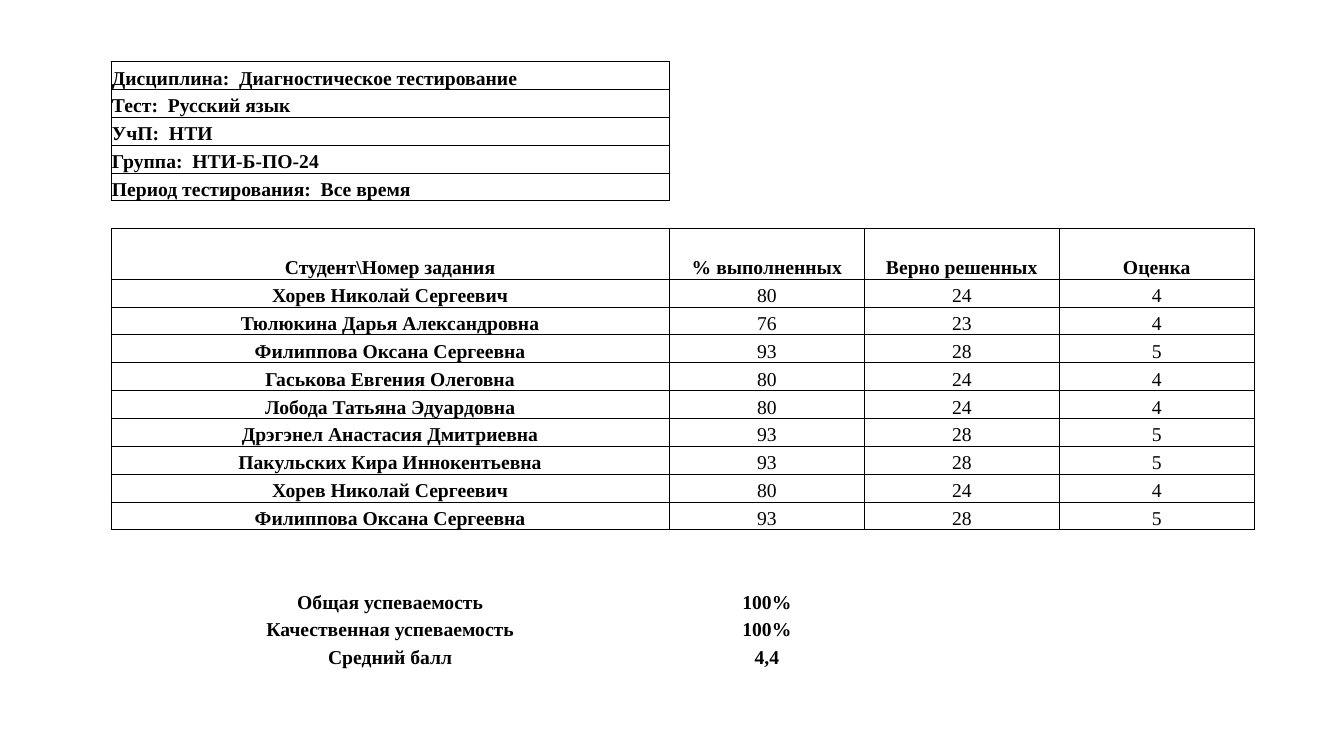
from dataclasses import dataclass

from lxml.etree import SubElement
from pptx import Presentation
from pptx.dml.color import RGBColor
from pptx.enum.text import MSO_ANCHOR, PP_ALIGN
from pptx.oxml.ns import qn
from pptx.util import Inches, Pt


@dataclass(frozen=True)
class Theme:
    font: str = "Times New Roman"
    text_size: int = 14
    ink: str = "000000"
    border_width: float = 0.5
    inset: float = 0.01


DETAILS = [
    "Дисциплина:  Диагностическое тестирование",
    "Тест:  Русский язык",
    "УчП:  НТИ",
    "Группа:  НТИ-Б-ПО-24",
    "Период тестирования:  Все время",
]
HEADINGS = ["Студент\\Номер задания", "% выполненных", "Верно решенных", "Оценка"]
RESULTS = [
    ("Хорев Николай Сергеевич", 80, 24, 4),
    ("Тюлюкина Дарья Александровна", 76, 23, 4),
    ("Филиппова Оксана Сергеевна", 93, 28, 5),
    ("Гаськова Евгения Олеговна", 80, 24, 4),
    ("Лобода Татьяна Эдуардовна", 80, 24, 4),
    ("Дрэгэнел Анастасия Дмитриевна", 93, 28, 5),
    ("Пакульских Кира Иннокентьевна", 93, 28, 5),
    ("Хорев Николай Сергеевич", 80, 24, 4),
    ("Филиппова Оксана Сергеевна", 93, 28, 5),
]
SUMMARY = [
    ("Общая успеваемость", "100%"),
    ("Качественная успеваемость", "100%"),
    ("Средний балл", "4,4"),
]

HEADING_ROW = len(DETAILS) + 1
RESULTS_END = HEADING_ROW + len(RESULTS)
ROWS = [[detail] for detail in DETAILS] + [[], HEADINGS, *RESULTS, [], [], *SUMMARY]
COLUMN_COUNT = len(HEADINGS)

LEFT, TOP, WIDTH, HEIGHT = 1.1, 0.61, 11.34, 6.03
NAME_WIDTH = 5.54
HEADING_HEIGHT = 0.5
SCORE_WIDTH = (WIDTH - NAME_WIDTH) / (COLUMN_COUNT - 1)
ROW_HEIGHT = (HEIGHT - HEADING_HEIGHT) / (len(ROWS) - 1)

NEIGHBOURS = {"L": (0, -1), "R": (0, 1), "T": (-1, 0), "B": (1, 0)}


def is_framed(row, column):
    in_details = 0 <= row < len(DETAILS) and column == 0
    in_results = HEADING_ROW <= row <= RESULTS_END and 0 <= column < COLUMN_COUNT
    return in_details or in_results


class ReportSlide:
    def __init__(self, presentation, theme):
        self.theme = theme
        self.slide = presentation.slides.add_slide(presentation.slide_layouts[6])

    def add_report(self):
        table = self.slide.shapes.add_table(
            len(ROWS), COLUMN_COUNT,
            Inches(LEFT), Inches(TOP), Inches(WIDTH), Inches(HEIGHT),
        ).table
        table.first_row = False
        table.horz_banding = False
        for index, column in enumerate(table.columns):
            column.width = Inches(SCORE_WIDTH if index else NAME_WIDTH)
        for index, row in enumerate(table.rows):
            row.height = Inches(HEADING_HEIGHT if index == HEADING_ROW else ROW_HEIGHT)
            for column in range(COLUMN_COUNT):
                self.format_cell(table.cell(index, column), index, column)

    def format_cell(self, cell, row, column):
        cell.vertical_anchor = MSO_ANCHOR.BOTTOM
        cell.margin_left = cell.margin_right = cell.margin_top = Inches(self.theme.inset)
        cell.margin_bottom = Inches(0)
        for side, (row_step, column_step) in NEIGHBOURS.items():
            visible = is_framed(row, column) or is_framed(row + row_step, column + column_step)
            self.add_border(cell, side, visible)
        cell.fill.background()
        paragraph = cell.text_frame.paragraphs[0]
        if column < len(ROWS[row]):
            is_score = HEADING_ROW < row <= RESULTS_END and column > 0
            self.add_text(paragraph, str(ROWS[row][column]), not is_score)
            paragraph.alignment = PP_ALIGN.LEFT if row < HEADING_ROW else PP_ALIGN.CENTER
        else:
            SubElement(paragraph._p, qn("a:endParaRPr"), sz=str(self.theme.text_size * 100))

    def add_border(self, cell, side, visible):
        properties = cell._tc.get_or_add_tcPr()
        line = SubElement(properties, qn(f"a:ln{side}"), w=str(Pt(self.theme.border_width)))
        if visible:
            fill = SubElement(line, qn("a:solidFill"))
            SubElement(fill, qn("a:srgbClr"), val=self.theme.ink)
        else:
            SubElement(line, qn("a:noFill"))

    def add_text(self, paragraph, text, bold):
        run = paragraph.add_run()
        run.text = text
        run.font.name = self.theme.font
        run.font.size = Pt(self.theme.text_size)
        run.font.bold = bold
        run.font.color.rgb = RGBColor.from_string(self.theme.ink)


def main():
    presentation = Presentation()
    presentation.slide_width = Inches(13.33)
    presentation.slide_height = Inches(7.5)
    ReportSlide(presentation, Theme()).add_report()
    presentation.save("out.pptx")


if __name__ == "__main__":
    main()
